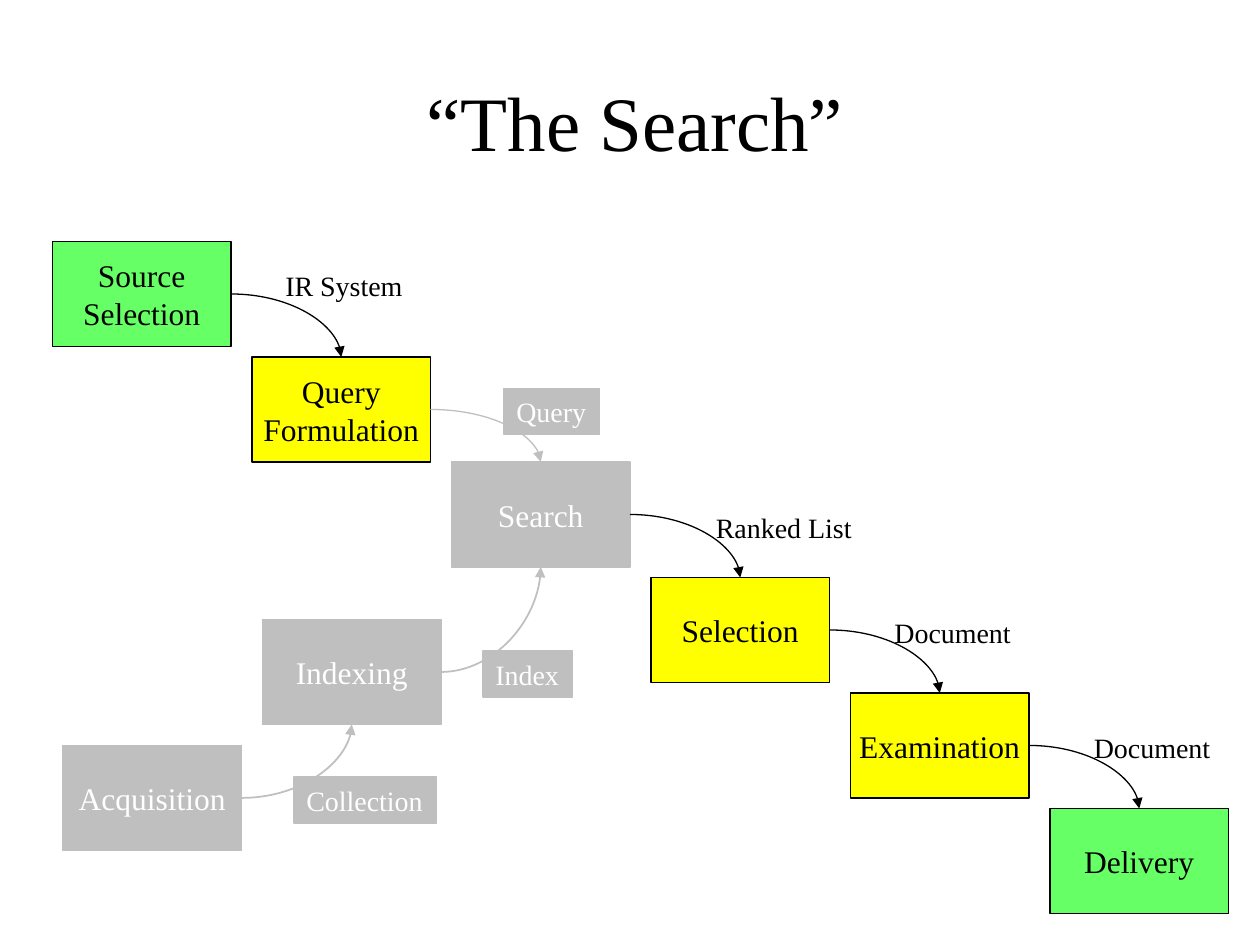
from dataclasses import dataclass

from pptx import Presentation
from pptx.dml.color import RGBColor
from pptx.enum.shapes import MSO_CONNECTOR, MSO_SHAPE
from pptx.enum.text import MSO_ANCHOR, MSO_AUTO_SIZE, PP_ALIGN
from pptx.oxml.ns import qn
from pptx.util import Emu, Inches, Pt
from lxml.etree import SubElement

PX = Inches(1) // 120
BOX_W, BOX_H, LABEL_H = 170, 100, 44
TOP, BOTTOM, RIGHT = 0, 2, 3


@dataclass(frozen=True)
class Theme:
    font: str = "Times New Roman"
    black: str = "000000"
    white: str = "FFFFFF"
    grey: str = "BFBFBF"
    green: str = "66FF66"
    yellow: str = "FFFF00"
    title_pt: int = 44
    box_pt: int = 18
    label_pt: int = 16
    line_pt: float = 0.75


T = Theme()


@dataclass(frozen=True)
class Stage:
    text: str
    x: int
    y: int
    fill: str


@dataclass(frozen=True)
class Flow:
    start: str
    end: str
    text: str
    x: int
    y: int
    w: int
    muted: bool = False
    site: int = TOP
    line_pt: float = T.line_pt


STAGES = [
    Stage("Source\nSelection", 50, 230, T.green),
    Stage("Query\nFormulation", 240, 340, T.yellow),
    Stage("Search", 430, 440, T.grey),
    Stage("Selection", 620, 550, T.yellow),
    Stage("Examination", 810, 660, T.yellow),
    Stage("Delivery", 1000, 770, T.green),
    Stage("Indexing", 250, 590, T.grey),
    Stage("Acquisition", 60, 710, T.grey),
]

FLOWS = [
    Flow("Source\nSelection", "Query\nFormulation", "IR System", 260, 250, 137),
    Flow("Query\nFormulation", "Search", "Query", 480, 370, 91, muted=True),
    Flow("Search", "Selection", "Ranked List", 670, 480, 153),
    Flow("Selection", "Examination", "Document", 840, 580, 136),
    Flow("Examination", "Delivery", "Document", 1030, 690, 137),
    Flow("Indexing", "Search", "Index", 460, 620, 85, True, BOTTOM, 1),
    Flow("Acquisition", "Indexing", "Collection", 280, 740, 136, True, BOTTOM, 1),
]


def px(*values: int) -> list[Emu]:
    return [Emu(v * PX) for v in values]


def rgb(value: str) -> RGBColor:
    return RGBColor.from_string(value)


def write(tf, text: str, *, size: int, color: str = T.black,
          align=PP_ALIGN.CENTER, anchor=MSO_ANCHOR.MIDDLE, wrap: bool = False) -> None:
    tf.word_wrap = wrap
    tf.vertical_anchor = anchor
    for i, line in enumerate(text.split("\n")):
        p = tf.add_paragraph() if i else tf.paragraphs[0]
        p.alignment = align
        r = p.add_run()
        r.text = line
        r.font.name = T.font
        r.font.size = Pt(size)
        r.font.color.rgb = rgb(color)


def add_rect(shapes, x: int, y: int, w: int, h: int, fill: str, line: str):
    sp = shapes.add_shape(MSO_SHAPE.RECTANGLE, *px(x, y, w, h))
    sp.shadow.inherit = False
    sp.fill.solid()
    sp.fill.fore_color.rgb = rgb(fill)
    sp.line.color.rgb = rgb(line)
    sp.line.width = Pt(T.line_pt)
    return sp


def add_stage(shapes, stage: Stage):
    muted = stage.fill == T.grey
    sp = add_rect(shapes, stage.x, stage.y, BOX_W, BOX_H, stage.fill,
                  T.grey if muted else T.black)
    write(sp.text_frame, stage.text, size=T.box_pt,
          color=T.white if muted else T.black)
    return sp


def add_arrow(shapes, flow: Flow, boxes: dict) -> None:
    cxn = shapes.add_connector(MSO_CONNECTOR.CURVE, 0, 0, 0, 0)
    cxn.begin_connect(boxes[flow.start], RIGHT)
    cxn.end_connect(boxes[flow.end], flow.site)
    cxn.line.color.rgb = rgb(T.grey if flow.muted else T.black)
    cxn.line.width = Pt(flow.line_pt)
    sp_pr = cxn._element.spPr
    sp_pr.find(qn("a:prstGeom")).set("prst", "curvedConnector2")
    SubElement(sp_pr.find(qn("a:ln")), qn("a:tailEnd"), type="triangle")
    SubElement(sp_pr, qn("a:effectLst"))


def add_label(shapes, flow: Flow) -> None:
    if flow.muted:
        sp = add_rect(shapes, flow.x, flow.y, flow.w, LABEL_H, T.grey, T.grey)
    else:
        sp = shapes.add_textbox(*px(flow.x, flow.y, flow.w, LABEL_H))
    write(sp.text_frame, flow.text, size=T.label_pt, align=PP_ALIGN.LEFT,
          anchor=MSO_ANCHOR.TOP, color=T.white if flow.muted else T.black)
    sp.text_frame.auto_size = MSO_AUTO_SIZE.SHAPE_TO_FIT_TEXT


def main() -> None:
    prs = Presentation()
    prs.slide_width, prs.slide_height = px(1200, 900)
    slide = prs.slides.add_slide(prs.slide_layouts[5])
    shapes = slide.shapes

    title = shapes.title
    title.left, title.top, title.width, title.height = px(70, 40, 1070, 150)
    write(title.text_frame, "“The Search”", size=T.title_pt, wrap=True)

    boxes = {stage.text: add_stage(shapes, stage) for stage in STAGES}
    for flow in FLOWS:
        add_arrow(shapes, flow, boxes)
        add_label(shapes, flow)

    prs.save("out.pptx")


if __name__ == "__main__":
    main()
